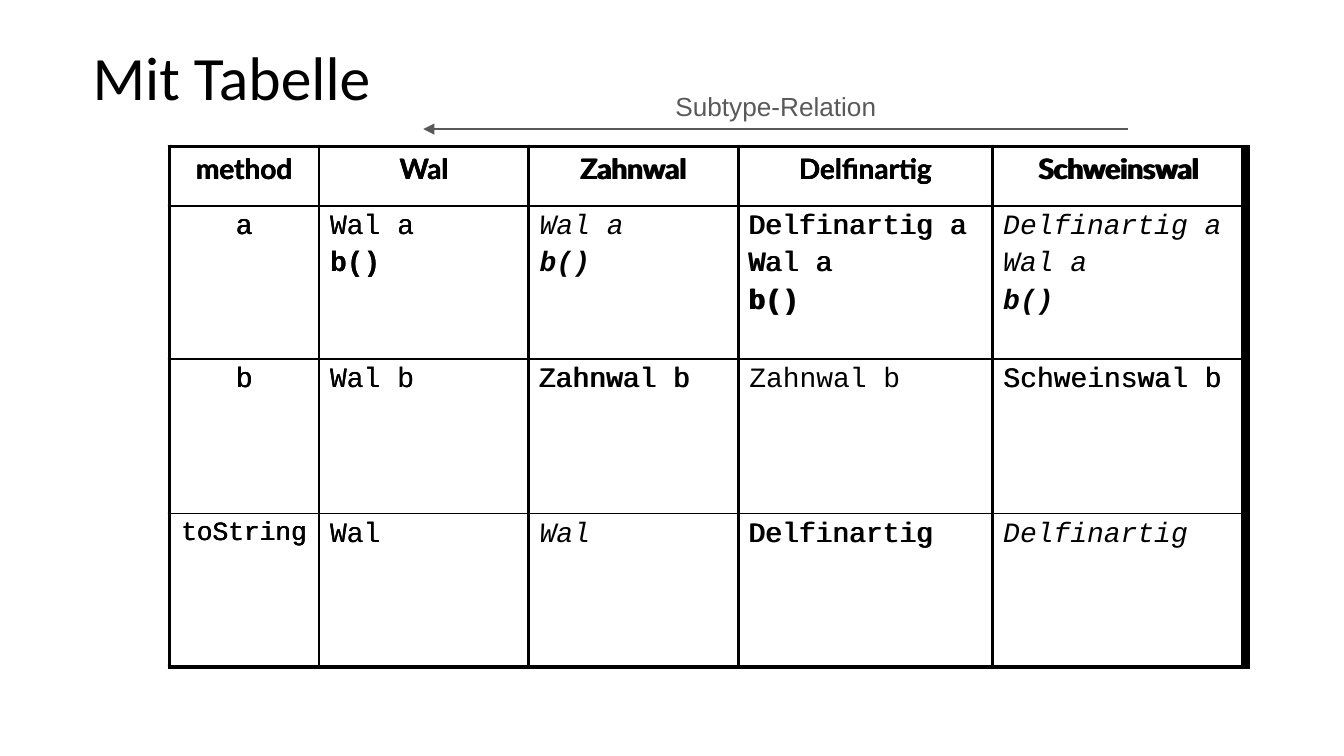
from lxml.etree import SubElement
from pptx import Presentation
from pptx.dml.color import RGBColor
from pptx.enum.shapes import MSO_CONNECTOR
from pptx.enum.text import MSO_ANCHOR, MSO_AUTO_SIZE, PP_ALIGN
from pptx.oxml.ns import qn
from pptx.util import Cm, Pt

COLORS = {"ink": "000000", "relation": "595959"}
THICK, THIN = Pt(2.25), Pt(1)

TYPES = ["method", "Wal", "Zahnwal", "Delfinartig", "Schweinswal"]
# Each entry: the stage at which it appears, its lines, italic or not
METHODS = {
    "a": [
        (2, ["Wal a", "b()"], False),
        (3, ["Wal a", "b()"], True),
        (2, ["Delfinartig a", "Wal a", "b()"], False),
        (3, ["Delfinartig a", "Wal a", "b()"], True),
    ],
    "b": [
        (2, ["Wal b"], False),
        (2, ["Zahnwal b"], False),
        (3, ["Zahnwal b"], False),
        (2, ["Schweinswal b"], False),
    ],
    "toString": [
        (2, ["Wal"], False),
        (3, ["Wal"], True),
        (2, ["Delfinartig"], False),
        (3, ["Delfinartig"], True),
    ],
}
# Column widths in cm for each stage of the table
STAGE_WIDTHS = {
    1: [2.82, 3.99, 3.96, 4.78, 4.83],
    2: [2.84, 3.94, 3.96, 4.83, 4.72],
    3: [2.84, 3.96, 3.96, 4.8, 4.78],
}
ROW_HEIGHTS = [1.12, 2.9, 2.92, 2.9]


def style_paragraph(paragraph, font_name, size, color="ink", bold=False,
                    italic=False, align=PP_ALIGN.LEFT):
    paragraph.alignment = align
    for run in paragraph.runs:
        font = run.font
        font.name, font.size = font_name, Pt(size)
        font.bold, font.italic = bold, italic
        font.color.rgb = RGBColor.from_string(COLORS[color])


def set_insets(frame, left, top, right, bottom):
    frame.margin_left, frame.margin_top = Cm(left), Cm(top)
    frame.margin_right, frame.margin_bottom = Cm(right), Cm(bottom)


def set_borders(cell, widths):
    properties = cell._tc.get_or_add_tcPr()
    for side, width in widths.items():
        border = SubElement(properties, qn(f"a:ln{side}"), w=str(width))
        fill = SubElement(border, qn("a:solidFill"))
        SubElement(fill, qn("a:srgbClr"), val=COLORS["ink"])


def add_title(slide, text):
    title = slide.shapes.title
    title.left, title.top = Cm(1.75), Cm(0.76)
    title.width, title.height = Cm(21.9), Cm(1.4)
    frame = title.text_frame
    frame.text = text
    frame.auto_size = MSO_AUTO_SIZE.NONE
    frame.vertical_anchor = MSO_ANCHOR.BOTTOM
    set_insets(frame, 0, 0.13, 0, 0)
    frame.paragraphs[0].line_spacing = 0.9
    style_paragraph(frame.paragraphs[0], "Calibri", 33)


def fill_entry(cell, lines, italic):
    cell.text = "\n".join(lines)
    for index, paragraph in enumerate(cell.text_frame.paragraphs):
        style_paragraph(paragraph, "Courier New", 15,
                        bold=paragraph.text == "b()", italic=italic)
        if index:
            paragraph.space_before = Pt(3)


def add_method_table(slide, stage):
    widths = STAGE_WIDTHS[stage]
    last_row, last_column = len(ROW_HEIGHTS) - 1, len(widths) - 1
    table = slide.shapes.add_table(
        len(ROW_HEIGHTS), len(widths), Cm(3.2), Cm(2.77),
        Cm(sum(widths)), Cm(sum(ROW_HEIGHTS))).table
    table.first_row = table.horz_banding = False
    for column, width in zip(table.columns, widths):
        column.width = Cm(width)
    for row, height in zip(table.rows, ROW_HEIGHTS):
        row.height = Cm(height)

    # Frame and grid lines
    for r, row in enumerate(table.rows):
        for c, cell in enumerate(row.cells):
            set_insets(cell, 0.2, 0.1, 0.2, 0.1)
            set_borders(cell, {
                "L": THICK if c == 0 else THIN,
                "R": THICK if c == last_column else THIN,
                "T": THICK if r == 0 else THIN,
                "B": THICK if r == last_row else THIN,
            })
            cell.fill.background()

    # Header row
    for c, type_name in enumerate(TYPES):
        cell = table.cell(0, c)
        cell.text = type_name
        style_paragraph(cell.text_frame.paragraphs[0], "Lato", 15,
                        bold=True, align=PP_ALIGN.CENTER)

    # Method names and the entries known at this stage
    for r, (method, entries) in enumerate(METHODS.items(), start=1):
        cell = table.cell(r, 0)
        cell.text = method
        style_paragraph(cell.text_frame.paragraphs[0], "Courier New",
                        14 if method == "toString" else 15,
                        align=PP_ALIGN.CENTER)
        for c, (first_stage, lines, italic) in enumerate(entries, start=1):
            if first_stage <= stage:
                fill_entry(table.cell(r, c), lines, italic)


def add_arrow(slide, start_x, end_x, y):
    arrow = slide.shapes.add_connector(
        MSO_CONNECTOR.STRAIGHT, Cm(start_x), Cm(y), Cm(end_x), Cm(y))
    arrow.line.width = Pt(1.5)
    arrow.line.color.rgb = RGBColor.from_string(COLORS["relation"])
    SubElement(arrow.line._get_or_add_ln(), qn("a:tailEnd"), type="triangle")
    SubElement(arrow._element.spPr, qn("a:effectLst"))


def add_label(slide, text, left, top, width, height):
    label = slide.shapes.add_textbox(Cm(left), Cm(top), Cm(width), Cm(height))
    frame = label.text_frame
    frame.word_wrap = True
    set_insets(frame, 0.25, 0.25, 0.25, 0.25)
    frame.text = text
    style_paragraph(frame.paragraphs[0], "Arial", 14, "relation",
                    align=PP_ALIGN.CENTER)


def main():
    presentation = Presentation()
    presentation.slide_width, presentation.slide_height = Cm(25.4), Cm(14.29)
    slide = presentation.slides.add_slide(presentation.slide_layouts[5])

    add_title(slide, "Mit Tabelle")
    # The stages of the table lie on top of each other
    for stage in STAGE_WIDTHS:
        add_method_table(slide, stage)
    # Subtype relation above the table
    add_arrow(slide, 21.31, 8, 2.44)
    add_label(slide, "Subtype-Relation", 12.24, 1.45, 4.85, 0.99)

    presentation.save("out.pptx")


if __name__ == "__main__":
    main()
